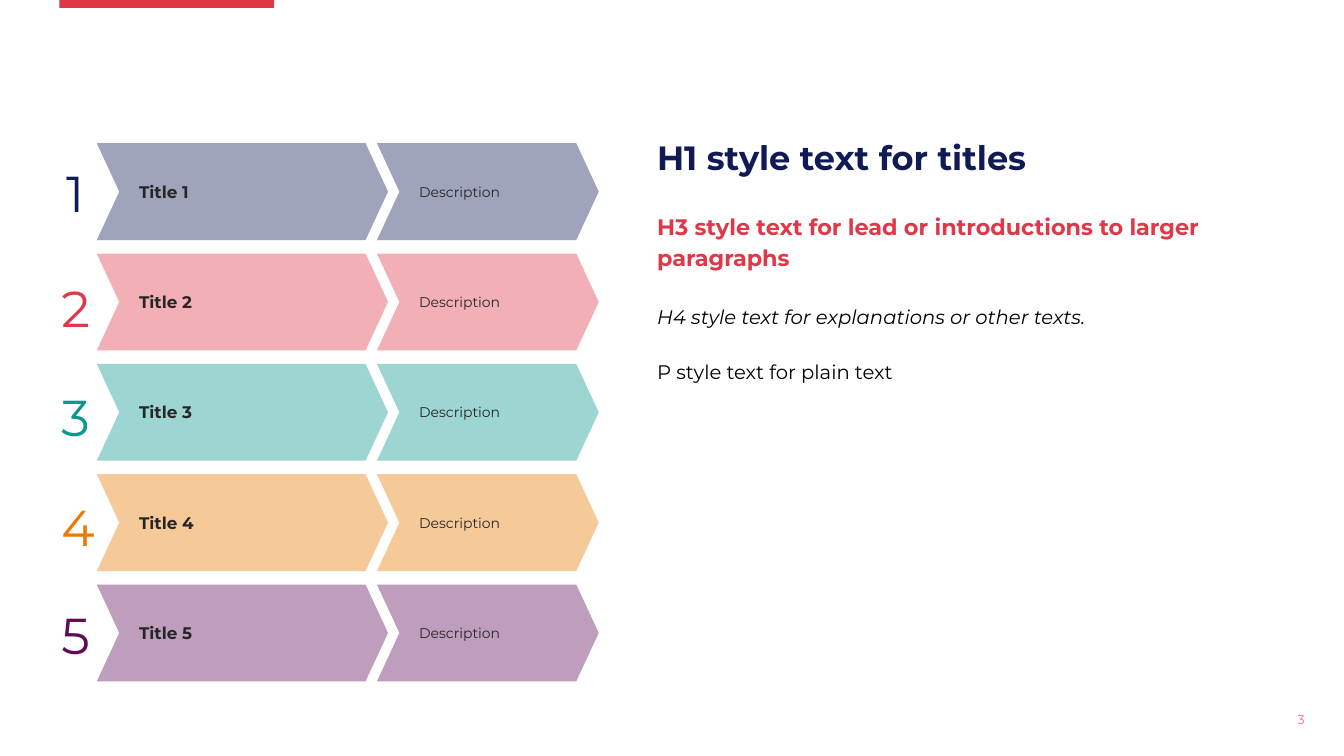
"""Build a slide with five numbered chevron rows beside sample text styles."""
from lxml import etree
from pptx import Presentation
from pptx.dml.color import RGBColor
from pptx.enum import shapes, text
from pptx.oxml import ns
from pptx.util import Cm, Pt

NAVY = RGBColor(0x10, 0x1B, 0x55)
RED = RGBColor(0xDF, 0x38, 0x49)
TEAL = RGBColor(0x08, 0x98, 0x8F)
ORANGE = RGBColor(0xEA, 0x78, 0x01)
PURPLE = RGBColor(0x61, 0x0A, 0x58)
PINK = RGBColor(0xFD, 0x69, 0x71)
CHARCOAL = RGBColor(0x26, 0x26, 0x26)
BLACK = RGBColor(0, 0, 0)

ROW_TOP, ROW_PITCH, ROW_HEIGHT = 3.61, 2.78, 2.44
ROWS = [(NAVY, 3.96), (RED, 6.86), (TEAL, 9.6), (ORANGE, 12.37), (PURPLE, 15.11)]


class SlideBuilder:
    font_name = "Montserrat"

    def __init__(self, slide):
        self.slide = slide

    def style(self, paragraph, size, color, bold=False, italic=False):
        font = paragraph.font
        font.name, font.size = self.font_name, Pt(size)
        font.bold, font.italic = bold, italic
        font.color.rgb = color

    def shape(self, kind, left, top, width, height, color):
        shape = self.slide.shapes.add_shape(kind, Cm(left), Cm(top), Cm(width), Cm(height))
        shape.shadow.inherit = False
        shape.fill.solid()
        shape.fill.fore_color.rgb = color
        shape.line.fill.background()
        return shape

    def chevron(self, left, top, width, color, label, size, bold=False):
        shape = self.shape(shapes.MSO_SHAPE.CHEVRON, left, top, width, ROW_HEIGHT, color)
        shape.adjustments[0] = 0.232
        fill_color = shape.fill._xPr.find(ns.qn("a:solidFill"))[0]
        etree.SubElement(fill_color, ns.qn("a:alpha"), val="40000")
        frame = shape.text_frame
        frame.vertical_anchor = text.MSO_ANCHOR.MIDDLE
        paragraph = frame.paragraphs[0]
        paragraph.text = label
        paragraph.alignment = text.PP_ALIGN.LEFT
        paragraph._p.get_or_add_pPr().set("marL", str(Cm(0.25)))
        self.style(paragraph, size, CHARCOAL, bold)

    def text_box(self, left, top, width, height):
        box = self.slide.shapes.add_textbox(Cm(left), Cm(top), Cm(width), Cm(height))
        box.text_frame.word_wrap = True
        return box.text_frame

    def label(self, left, top, width, height, content, size, color, alignment):
        paragraph = self.text_box(left, top, width, height).paragraphs[0]
        paragraph.text = content
        paragraph.alignment = alignment
        self.style(paragraph, size, color)

    def text_styles(self, left, top, width, height, samples):
        frame = self.text_box(left, top, width, height)
        for index, (content, space_before, *style) in enumerate(samples):
            paragraph = frame.add_paragraph() if index else frame.paragraphs[0]
            paragraph.text = content
            if index:
                paragraph.line_spacing = 1.15
                paragraph.space_before = Pt(space_before)
            self.style(paragraph, *style)


def main():
    presentation = Presentation()
    presentation.slide_width, presentation.slide_height = Cm(33.87), Cm(19.05)
    builder = SlideBuilder(presentation.slides.add_slide(presentation.slide_layouts[6]))

    builder.label(27.41, 17.81, 5.72, 0.64, "3", 9, PINK, text.PP_ALIGN.RIGHT)
    builder.shape(shapes.MSO_SHAPE.RECTANGLE, 1.5, -0.03, 5.41, 0.23, RED)

    for index, (color, number_top) in enumerate(ROWS):
        number = index + 1
        top = ROW_TOP + index * ROW_PITCH
        builder.chevron(2.44, top, 7.34, color, f"Title {number}", 12, bold=True)
        builder.chevron(9.5, top, 5.59, color, "Description", 10)
        builder.label(1.3, number_top, 1.19, 1.68, str(number), 36, color, text.PP_ALIGN.CENTER)

    builder.text_styles(16.31, 3.33, 16.28, 7.21, [
        ("H1 style text for titles", 0, 24, NAVY, True),
        ("H3 style text for lead or introductions to larger paragraphs", 22.4, 16, RED, True),
        ("H4 style text for explanations or other texts.", 22.4, 14, BLACK, False, True),
        ("P style text for plain text", 19.6, 14, BLACK),
    ])
    presentation.save("out.pptx")


if __name__ == "__main__":
    main()
